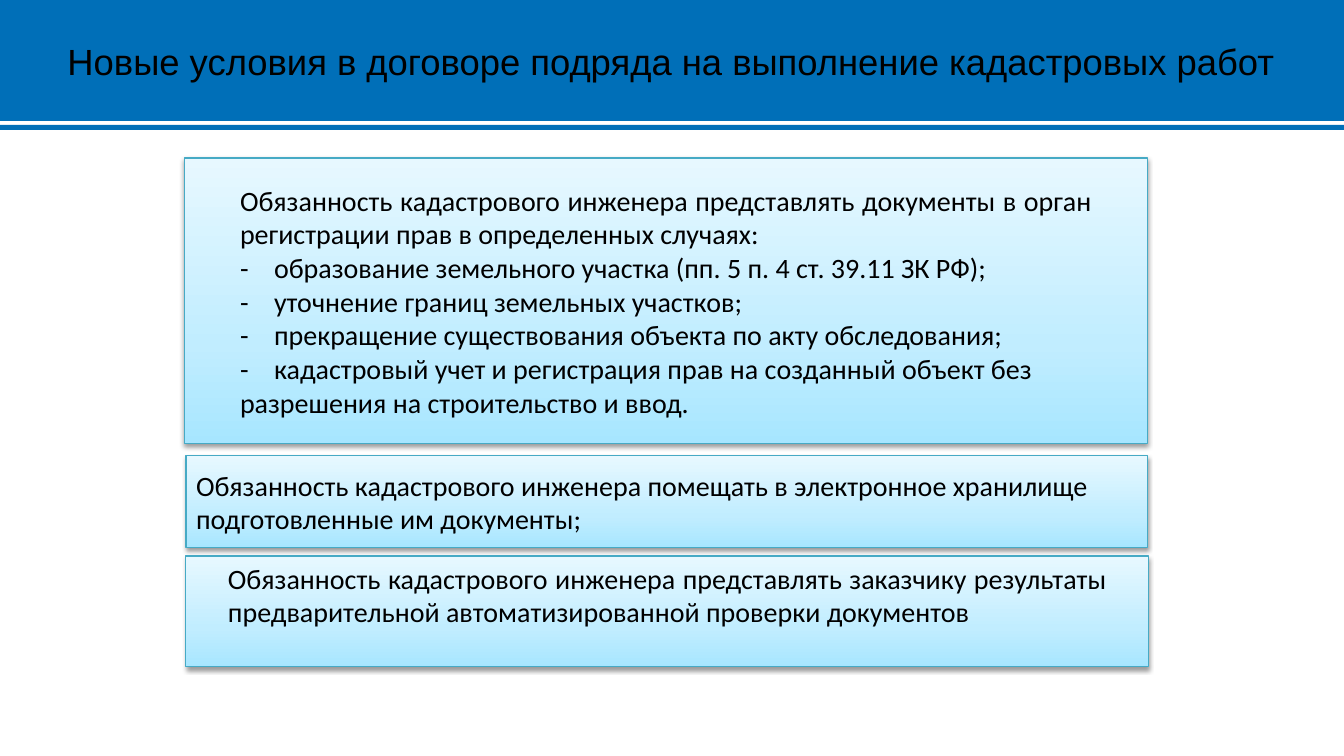
"""Build a slide on new terms in contracts for cadastral work."""
from copy import deepcopy

from lxml.etree import SubElement
from pptx import Presentation
from pptx.dml.color import RGBColor
from pptx.enum.shapes import MSO_SHAPE
from pptx.enum.text import MSO_ANCHOR, PP_ALIGN
from pptx.oxml.ns import qn
from pptx.util import Emu, Pt

SCALE = 914400 / 100.8
BLUE = RGBColor(0x00, 0x6F, 0xB8)
TEAL = RGBColor(0x46, 0xAA, 0xC5)
BLACK = RGBColor(0x00, 0x00, 0x00)
STOPS = (
    (0, RGBColor(0xA7, 0xE6, 0xFF)),
    (0.35, RGBColor(0xC1, 0xED, 0xFF)),
    (1, RGBColor(0xE7, 0xF8, 0xFF)),
)
HEAD = {"name": "Arial", "size": Pt(26)}
BODY = {"name": "Calibri", "size": Pt(20)}

TITLE = "Новые условия в договоре подряда на выполнение кадастровых работ"
SUBMIT = (
    "Обязанность кадастрового инженера представлять документы в орган "
    "регистрации прав в определенных случаях:"
)
CASES = (
    "образование земельного участка (пп. 5 п. 4 ст. 39.11 ЗК РФ);",
    "уточнение границ земельных участков;",
    "прекращение существования объекта по акту обследования;",
    "кадастровый учет и регистрация прав на созданный объект без "
    "разрешения на строительство и ввод.",
)
STORE = (
    "Обязанность кадастрового инженера помещать в электронное хранилище "
    "подготовленные им документы;"
)
CHECK = (
    "Обязанность кадастрового инженера представлять заказчику результаты "
    "предварительной автоматизированной проверки документов"
)


def px(num):
    """Turn pixels into EMU."""
    return Emu(round(num * SCALE))


def assign(item, form):
    """Set attributes from a dict of format values."""
    for key, value in form.items():
        setattr(item, key, value)


def add_rect(slide, area):
    """Add a plain rectangle without a shadow."""
    rect = slide.shapes.add_shape(MSO_SHAPE.RECTANGLE, *map(px, area))
    rect.shadow.inherit = False
    return rect


def add_bar(slide, area):
    """Add a solid blue bar."""
    bar = add_rect(slide, area)
    bar.fill.solid()
    bar.fill.fore_color.rgb = BLUE
    bar.line.fill.background()
    return bar


def add_shade(shape):
    """Add a soft shadow below a shape."""
    effects = shape._element.spPr.find(qn("a:effectLst"))
    shade = SubElement(effects, qn("a:outerShdw"), blurRad="40000",
                       dist="20000", dir="5400000", rotWithShape="0")
    color = SubElement(shade, qn("a:srgbClr"), val=str(BLACK))
    SubElement(color, qn("a:alpha"), val="38000")


def add_card(slide, area):
    """Add a card with a gradient, a thin outline and a shadow."""
    card = add_rect(slide, area)
    card.fill.gradient()
    card.fill.gradient_angle = 90
    first = card._element.spPr.find(".//" + qn("a:gs"))
    first.addnext(deepcopy(first))
    for stop, (place, color) in zip(card.fill.gradient_stops, STOPS):
        stop.position = place
        stop.color.rgb = color
    card.line.color.rgb = TEAL
    card.line.width = Pt(0.75)
    add_shade(card)
    return card


def add_tab(para, place):
    """Add a left tab stop to a paragraph."""
    tabs = SubElement(para._p.get_or_add_pPr(), qn("a:tabLst"))
    SubElement(tabs, qn("a:tab"), pos=str(px(place)), algn="l")


def write(shape, lines, font, align, inset=10, **form):
    """Write paragraphs into a shape, the first one with its own alignment."""
    frame = shape.text_frame
    base = {"word_wrap": True, "vertical_anchor": MSO_ANCHOR.MIDDLE,
            "margin_left": px(inset), "margin_right": px(inset),
            "margin_top": px(5), "margin_bottom": px(5)}
    assign(frame, base | form)
    frame.text = "\n".join(lines)
    for rank, para in enumerate(frame.paragraphs):
        para.alignment = PP_ALIGN.LEFT if rank else align
        if "\t" in para.text:
            add_tab(para, 34)
        assign(para.font, font)
        para.font.color.rgb = BLACK


def main():
    """Build and save the slide."""
    deck = Presentation()
    assign(deck, {"slide_width": px(1344), "slide_height": px(756)})
    slide = deck.slides.add_slide(deck.slide_layouts[6])

    check = add_card(slide, (186, 556, 963, 111))
    write(check, [CHECK], BODY, PP_ALIGN.JUSTIFY, 42,
          vertical_anchor=MSO_ANCHOR.TOP)
    submit = add_card(slide, (184, 158, 964, 286))
    write(submit, [SUBMIT, *(f"-\t{case}" for case in CASES)], BODY,
          PP_ALIGN.JUSTIFY, 56)
    store = add_card(slide, (186, 456, 962, 92))
    write(store, [STORE], BODY, PP_ALIGN.LEFT)

    add_bar(slide, (0, 125, 1344, 5))
    title = add_bar(slide, (0, 0, 1344, 121))
    write(title, [TITLE], HEAD, PP_ALIGN.CENTER, word_wrap=False)
    deck.save("out.pptx")


if __name__ == "__main__":
    main()
